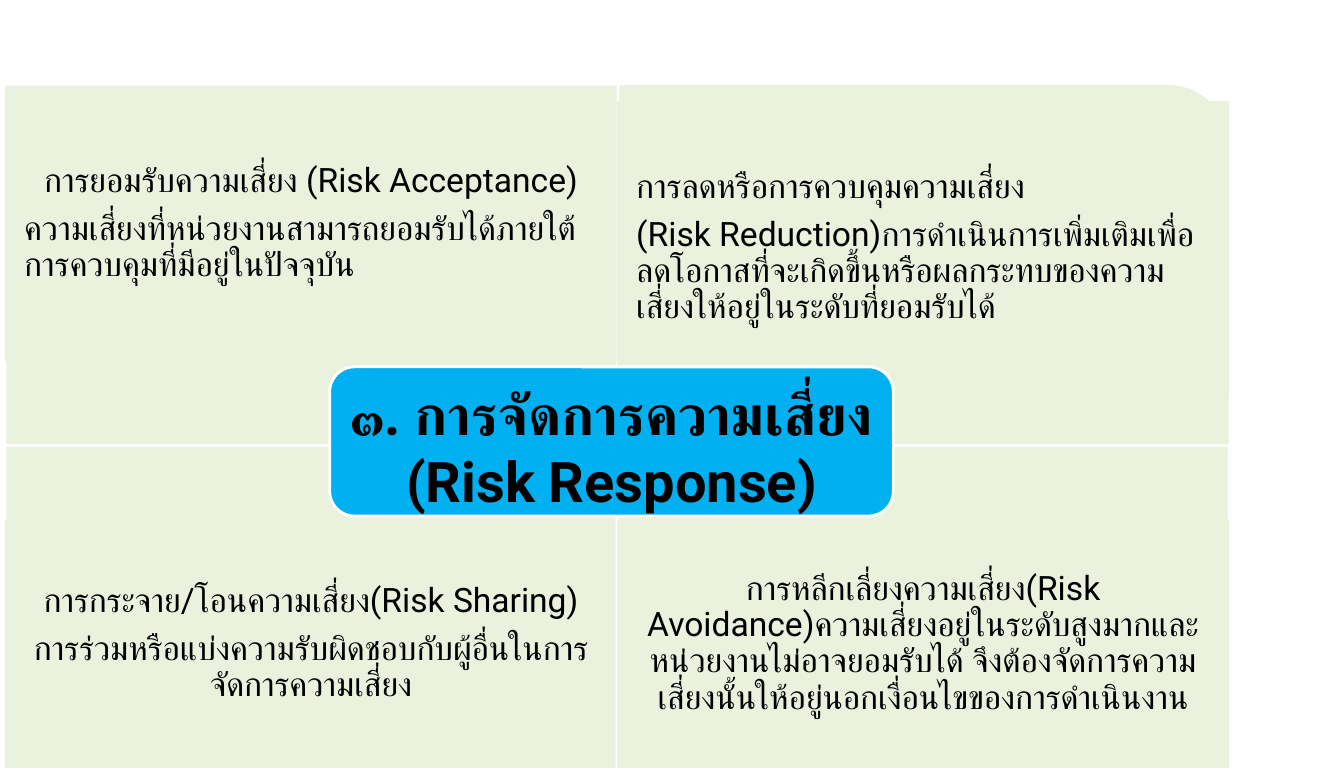
from pptx import Presentation
from pptx.dml.color import RGBColor
from pptx.enum.shapes import MSO_SHAPE
from pptx.enum.text import MSO_ANCHOR, PP_ALIGN
from pptx.util import Inches, Pt

COLORS = {"tile": "EAF1DD", "title": "00B0F0", "line": "FFFFFF", "text": "000000"}
FONT = "Roboto"
TILE_W = 6.07
LEFT, CENTER = PP_ALIGN.LEFT, PP_ALIGN.CENTER

# Tile frame (left, top, height), rotation, text frame (left, top, height), paragraphs
QUADRANTS = [
    ((0.05, 0.85, 3.65), 270, (0.05, 0.85, 2.74), [
        ("การยอมรับความเสี่ยง (Risk Acceptance)", CENTER),
        ("ความเสี่ยงที่หน่วยงานสามารถยอมรับได้ภายใต้การควบคุมที่มีอยู่ในปัจจุบัน", LEFT)]),
    ((6.13, 0.83, 3.65), 0, (6.12, 1, 2.91), [
        ("การลดหรือการควบคุมความเสี่ยง", LEFT),
        ("(Risk Reduction)การดำเนินการเพิ่มเติมเพื่อลดโอกาสที่จะเกิดขึ้นหรือ"
         "ผลกระทบของความเสี่ยงให้อยู่ในระดับที่ยอมรับได้", LEFT)]),
    ((0.05, 4.42, 3.2), 180, (0.05, 5.16, 2.46), [
        ("การกระจาย/โอนความเสี่ยง(Risk Sharing)", CENTER),
        ("การร่วมหรือแบ่งความรับผิดชอบกับผู้อื่นในการจัดการความเสี่ยง", CENTER)]),
    ((6.12, 4.42, 3.2), 90, (6.12, 5.16, 2.46), [
        ("การหลีกเลี่ยงความเสี่ยง(Risk Avoidance)ความเสี่ยงอยู่ในระดับสูงมากและ"
         "หน่วยงานไม่อาจยอมรับได้ จึงต้องจัดการความเสี่ยงนั้นให้อยู่นอกเงื่อนไข"
         "ของการดำเนินงาน", CENTER)]),
]
TITLE = [("๓. การจัดการความเสี่ยง ", CENTER), ("(Risk Response)", CENTER)]


def rgb(name):
    return RGBColor.from_string(COLORS[name])


def add_box(s, kind, left, top, width, height, fill, outlined=True):
    sp = s.shapes.add_shape(kind, Inches(left), Inches(top), Inches(width), Inches(height))
    sp.shadow.inherit = False
    sp.fill.solid()
    sp.fill.fore_color.rgb = rgb(fill)
    if outlined:
        sp.line.color.rgb = rgb("line")
        sp.line.width = Pt(2)
    else:
        sp.line.fill.background()
    return sp


def write(sp, paragraphs, size, margins, anchor, bold=False, spacing=None, gap=0):
    tf = sp.text_frame
    tf.word_wrap = True
    tf.vertical_anchor = anchor
    tf.margin_left = tf.margin_right = Inches(margins[0])
    tf.margin_top = tf.margin_bottom = Inches(margins[1])
    for i, (text, align) in enumerate(paragraphs):
        p = tf.add_paragraph() if i else tf.paragraphs[0]
        p.alignment = align
        p.line_spacing = spacing
        if i:
            p.space_before = Pt(gap)
        r = p.add_run()
        r.text = text
        r.font.name = FONT
        r.font.size = Pt(size)
        r.font.bold = bold
        r.font.color.rgb = rgb("text")


def add_quadrant(s, tile, rotation, label, paragraphs):
    left, top, height = tile
    width = TILE_W
    # A quarter turn swaps the sides about the tile's centre
    if rotation % 180:
        shift = (width - height) / 2
        left, top, width, height = left + shift, top - shift, height, width
    sp = add_box(s, MSO_SHAPE.ROUND_1_RECTANGLE, left, top, width, height, "tile")
    sp.rotation = rotation

    left, top, height = label
    sp = add_box(s, MSO_SHAPE.RECTANGLE, left, top, TILE_W, height, "tile", outlined=False)
    write(sp, paragraphs, 24, (0.19, 0.19), MSO_ANCHOR.MIDDLE, spacing=0.9, gap=8.4)


def main():
    prs = Presentation()
    prs.slide_width, prs.slide_height = Inches(13.33), Inches(7.68)
    s = prs.slides.add_slide(prs.slide_layouts[6])

    # Four risk responses
    for quadrant in QUADRANTS:
        add_quadrant(s, *quadrant)

    # Central title
    sp = add_box(s, MSO_SHAPE.ROUNDED_RECTANGLE, 3.27, 3.64, 5.59, 1.48, "title")
    write(sp, TITLE, 40, (0.1, 0.05), MSO_ANCHOR.TOP, bold=True)

    prs.save("out.pptx")


if __name__ == "__main__":
    main()
